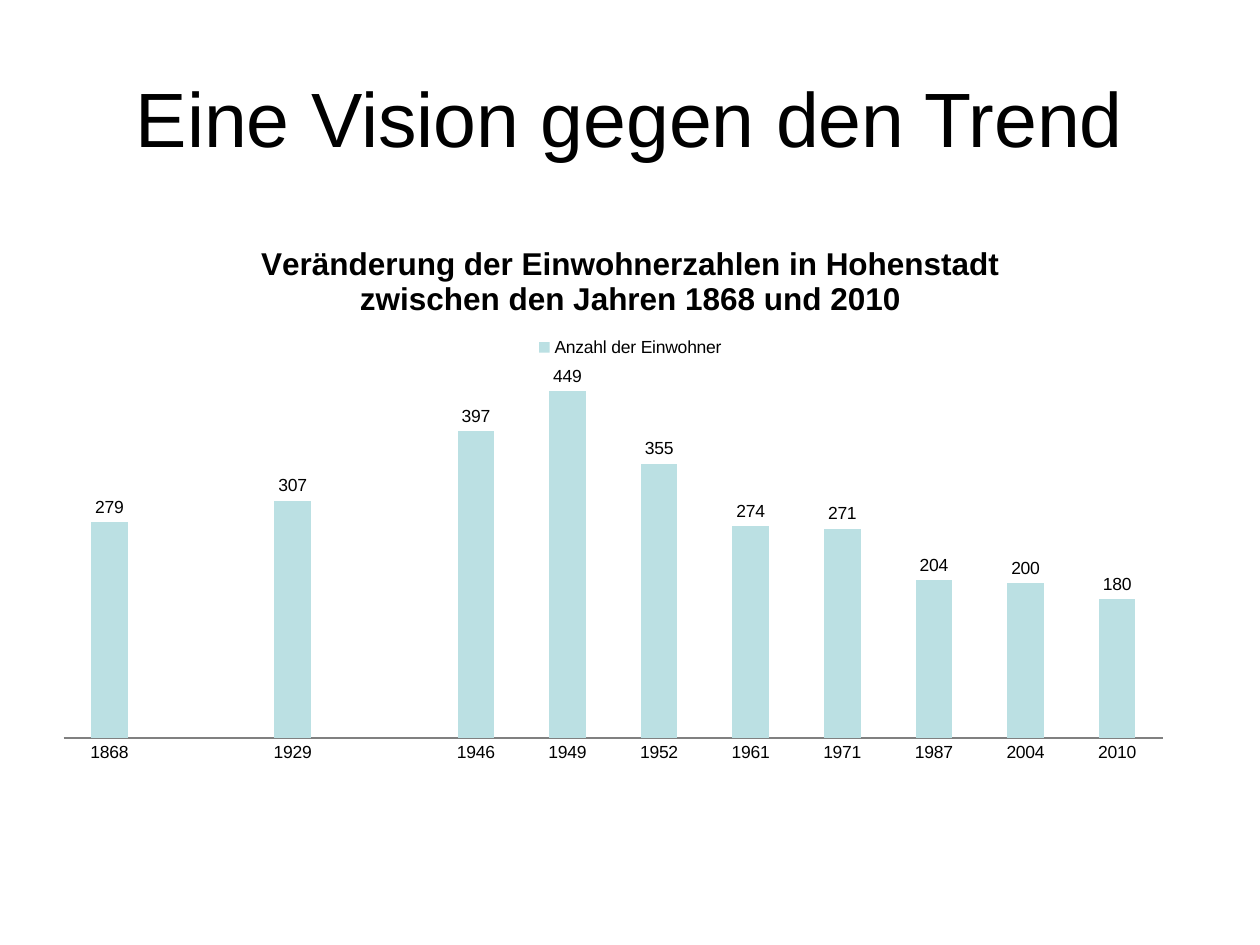
from dataclasses import dataclass

from pptx import Presentation
from pptx.chart.data import CategoryChartData
from pptx.dml.color import RGBColor
from pptx.enum.chart import (
    XL_CHART_TYPE, XL_LABEL_POSITION, XL_LEGEND_POSITION, XL_TICK_MARK)
from pptx.enum.text import MSO_ANCHOR, PP_ALIGN
from pptx.oxml import parse_xml
from pptx.oxml.ns import nsdecls
from pptx.util import Cm, Pt

COLUMNS = XL_CHART_TYPE.COLUMN_CLUSTERED
OUTSIDE_END = XL_LABEL_POSITION.OUTSIDE_END
LEGEND_TOP = XL_LEGEND_POSITION.TOP
NO_TICKS = XL_TICK_MARK.NONE
MIDDLE = MSO_ANCHOR.MIDDLE
CENTER = PP_ALIGN.CENTER
TITLE_ONLY = 5


@dataclass(frozen=True)
class Theme:
    font: str = "Arial"
    text: RGBColor = RGBColor(0, 0, 0)
    bar: RGBColor = RGBColor(0xBB, 0xE0, 0xE3)
    axis: RGBColor = RGBColor(0x80, 0x80, 0x80)
    title_size: int = 44
    chart_title_size: int = 18
    chart_size: int = 10


theme = Theme()


def write_text(text_frame, text, size, bold=False, align=CENTER):
    """Fill the frame with one formatted paragraph per line of text."""
    text_frame.text = text
    for paragraph in text_frame.paragraphs:
        paragraph.alignment = align
        for run in paragraph.runs:
            run.font.name = theme.font
            run.font.size = Pt(size)
            run.font.bold = bold
            run.font.color.rgb = theme.text


presentation = Presentation()
presentation.slide_width = Cm(25.4)
presentation.slide_height = Cm(19.05)
slide = presentation.slides.add_slide(presentation.slide_layouts[TITLE_ONLY])

# Slide title
title = slide.shapes.title
title.left, title.top, title.width, title.height = Cm(1.27), Cm(0.76), Cm(22.86), Cm(3.18)
title.text_frame.vertical_anchor = MIDDLE
write_text(title.text_frame, "Eine Vision gegen den Trend", size=theme.title_size)

# Population chart; the empty categories widen the gaps between early counts
population = [
    ("1868", 279), ("", None), ("1929", 307), ("", None),
    ("1946", 397), ("1949", 449), ("1952", 355), ("1961", 274),
    ("1971", 271), ("1987", 204), ("2004", 200), ("2010", 180),
]
chart_data = CategoryChartData()
chart_data.categories = [year for year, _ in population]
chart_data.add_series("Anzahl der Einwohner", [count for _, count in population])
chart = slide.shapes.add_chart(
    COLUMNS, Cm(1.27), Cm(4.45), Cm(22.86), Cm(12.57), chart_data).chart
chart.font.name = theme.font
chart.font.size = Pt(theme.chart_size)
chart.font.color.rgb = theme.text

chart.has_title = True
write_text(
    chart.chart_title.text_frame,
    "Veränderung der Einwohnerzahlen in Hohenstadt\nzwischen den Jahren 1868 und 2010",
    size=theme.chart_title_size, bold=True)
chart.chart_title.include_in_layout = False

chart.has_legend = True
chart.legend.position = LEGEND_TOP
chart.legend.include_in_layout = False

# Axes
category_axis = chart.category_axis
category_axis.major_tick_mark = NO_TICKS
category_axis.minor_tick_mark = NO_TICKS
category_axis.format.line.color.rgb = theme.axis
value_axis = chart.value_axis
value_axis.minimum_scale = 0
value_axis.maximum_scale = 500
value_axis.has_major_gridlines = False
value_axis.visible = False

# Columns and their values
plot = chart.plots[0]
plot.vary_by_categories = False
plot.gap_width = 150
plot.overlap = -25
plot.has_data_labels = True
plot.data_labels.show_value = True
plot.data_labels.position = OUTSIDE_END
bar_fill = plot.series[0].format.fill
bar_fill.solid()
bar_fill.fore_color.rgb = theme.bar

# Fixed inner plot area, in fractions of the chart
plot_area = chart.element.xpath("c:chart/c:plotArea")[0]
for layout in plot_area.xpath("c:layout"):
    plot_area.remove(layout)
plot_area.insert(0, parse_xml(
    f'<c:layout {nsdecls("c")}><c:manualLayout><c:layoutTarget val="inner"/>'
    '<c:xMode val="edge"/><c:yMode val="edge"/>'
    '<c:x val="0"/><c:y val="0.21"/><c:w val="0.97"/><c:h val="0.62"/>'
    '</c:manualLayout></c:layout>'))

presentation.save("out.pptx")
